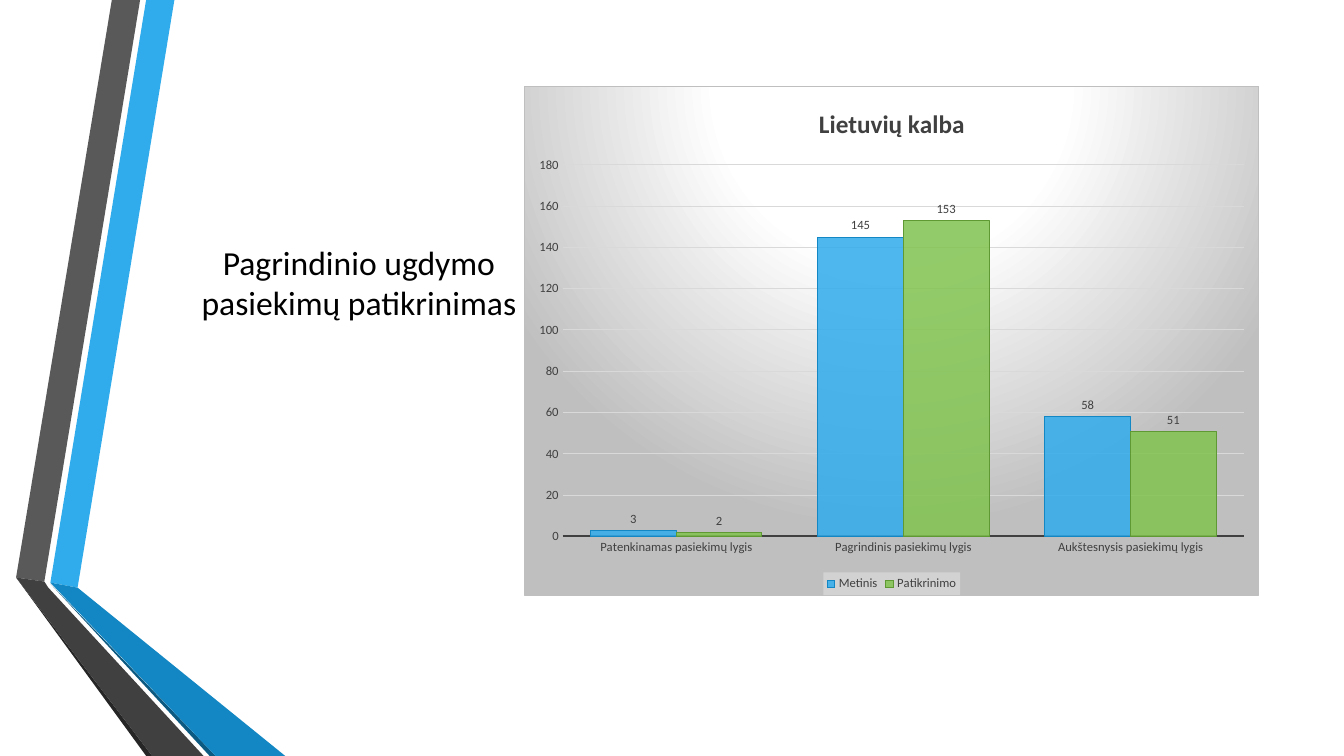
from lxml import etree
from pptx import Presentation
from pptx.chart.data import CategoryChartData
from pptx.dml.color import RGBColor
from pptx.enum.chart import XL_CHART_TYPE, XL_LABEL_POSITION, XL_LEGEND_POSITION, XL_TICK_MARK
from pptx.enum.text import MSO_ANCHOR, PP_ALIGN
from pptx.oxml import parse_xml
from pptx.oxml.ns import qn
from pptx.util import Inches, Pt

COLUMNS = XL_CHART_TYPE.COLUMN_CLUSTERED
OUTSIDE_END = XL_LABEL_POSITION.OUTSIDE_END
LEGEND_BOTTOM = XL_LEGEND_POSITION.BOTTOM
NO_TICK = XL_TICK_MARK.NONE
ANCHOR_BOTTOM = MSO_ANCHOR.BOTTOM
CENTER = PP_ALIGN.CENTER

FONT = "Calibri"
DARK = "404040"
NAMESPACES = (
    'xmlns:c="http://schemas.openxmlformats.org/drawingml/2006/chart" '
    'xmlns:a="http://schemas.openxmlformats.org/drawingml/2006/main"'
)

# Fill and corner points, relative to the left top of the ribbon
RIBBON_FACES = [
    ("30ACEC", [(0.5, 5.78), (0.77, 5.83), (1.73, 0), (1.45, 0)]),
    ("595959", [(1.39, 0), (1.11, 0), (0.16, 5.73), (0.44, 5.77)]),
    ("262626", [(0.16, 5.73), (1.45, 7.5), (1.51, 7.5)]),
    ("0C5A82", [(0.5, 5.79), (2.08, 7.5), (2.14, 7.5)]),
    ("1287C3", [(0.5, 5.78), (2.14, 7.5), (2.83, 7.5), (0.77, 5.83)]),
    ("404040", [(2.02, 7.5), (0.48, 5.83), (0.44, 5.77), (0.16, 5.73), (1.51, 7.5)]),
]

LEVELS = ["Patenkinamas pasiekimų lygis", "Pagrindinis pasiekimų lygis",
          "Aukštesnysis pasiekimų lygis"]
# Name, values, fill, outline
RESULTS = [
    ("Metinis", (3, 145, 58), "30ACEC", "1287C3"),
    ("Patikrinimo", (2, 153, 51), "80C34F", "5F9934"),
]


def rgb(value):
    return RGBColor.from_string(value)


def style_font(font, size, color=DARK, bold=False):
    font.name = FONT
    font.size = Pt(size)
    font.bold = bold
    font.color.rgb = rgb(color)


def style_line(line, color, width):
    line.color.rgb = rgb(color)
    line.width = Pt(width)


def add_ribbon(slide, left, top):
    for color, corners in RIBBON_FACES:
        points = [(Inches(left + x), Inches(top + y)) for x, y in corners]
        outline = slide.shapes.build_freeform(*points[0])
        outline.add_line_segments(points[1:], close=True)
        face = outline.convert_to_shape()
        face.shadow.inherit = False
        face.fill.solid()
        face.fill.fore_color.rgb = rgb(color)
        face.line.fill.background()


def fill_title(slide, left, top, width, height):
    title = slide.shapes.title
    title.left, title.top = Inches(left), Inches(top)
    title.width, title.height = Inches(width), Inches(height)
    frame = title.text_frame
    frame.text = "Pagrindinio ugdymo pasiekimų patikrinimas"
    frame.word_wrap = True
    frame.vertical_anchor = ANCHOR_BOTTOM
    heading = frame.paragraphs[0]
    heading.alignment = CENTER
    style_font(heading.runs[0].font, 24, "000000")


def style_axes(chart):
    levels, counts = chart.category_axis, chart.value_axis
    for axis in (levels, counts):
        axis.major_tick_mark = axis.minor_tick_mark = NO_TICK
        style_font(axis.tick_labels.font, 9)
    style_line(levels.format.line, DARK, 1.5)
    counts.format.line.fill.background()
    counts.minimum_scale, counts.maximum_scale = 0, 180
    counts.major_unit = 20
    style_line(counts.major_gridlines.format.line, "D9D9D9", 0.75)


def style_results(plot):
    plot.gap_width = 65
    plot.overlap = 0
    plot.vary_by_categories = False
    for series, (_, _, fill, outline) in zip(plot.series, RESULTS):
        series.format.fill.solid()
        series.format.fill.fore_color.rgb = rgb(fill)
        fill_color = series.format.fill._xPr.find(f".//{qn('a:srgbClr')}")
        etree.SubElement(fill_color, qn("a:alpha")).set("val", "85000")
        style_line(series.format.line, outline, 0.75)
        labels = series.data_labels
        labels.show_value = True
        labels.position = OUTSIDE_END
        style_font(labels.font, 9)


def add_legend(chart):
    chart.has_legend = True
    legend = chart.legend
    legend.position = LEGEND_BOTTOM
    legend.include_in_layout = False
    style_font(legend.font, 9)
    backing = parse_xml(
        f'<c:spPr {NAMESPACES}><a:solidFill><a:srgbClr val="F2F2F2">'
        '<a:alpha val="39000"/></a:srgbClr></a:solidFill>'
        '<a:ln><a:noFill/></a:ln></c:spPr>'
    )
    legend._element.find(qn("c:txPr")).addprevious(backing)


def fill_chart_area(chart):
    """Give the chart a radial gradient and a thin border."""
    stops = "".join(
        f'<a:gs pos="{position * 1000}"><a:srgbClr val="{color}"/></a:gs>'
        for position, color in [(0, "FFFFFF"), (39, "FFFFFF"), (100, "BFBFBF")]
    )
    area = parse_xml(
        f'<c:spPr {NAMESPACES}><a:gradFill><a:gsLst>{stops}</a:gsLst>'
        '<a:path path="circle">'
        '<a:fillToRect l="50000" t="-80000" r="50000" b="180000"/></a:path></a:gradFill>'
        '<a:ln w="9525"><a:solidFill><a:srgbClr val="BFBFBF"/></a:solidFill></a:ln></c:spPr>'
    )
    chart._chartSpace.find(qn("c:chart")).addnext(area)


def add_results_chart(slide, left, top, width, height):
    chart_data = CategoryChartData()
    chart_data.categories = LEVELS
    for name, values, _, _ in RESULTS:
        chart_data.add_series(name, values)
    box = [Inches(length) for length in (left, top, width, height)]
    chart = slide.shapes.add_chart(COLUMNS, *box, chart_data).chart
    style_font(chart.font, 10, "000000")
    chart.has_title = True
    heading = chart.chart_title.text_frame
    heading.text = "Lietuvių kalba"
    style_font(heading.paragraphs[0].runs[0].font, 18, bold=True)
    chart.chart_title.include_in_layout = False
    style_axes(chart)
    style_results(chart.plots[0])
    add_legend(chart)
    fill_chart_area(chart)


def main():
    presentation = Presentation()
    presentation.slide_width = Inches(13.33)
    presentation.slide_height = Inches(7.5)
    slide = presentation.slides.add_slide(presentation.slide_layouts[5])
    add_ribbon(slide, 0, 0)
    fill_title(slide, 1.62, 1.75, 3.88, 1.5)
    add_results_chart(slide, 5.2, 0.85, 7.29, 5.06)
    presentation.save("out.pptx")


if __name__ == "__main__":
    main()
